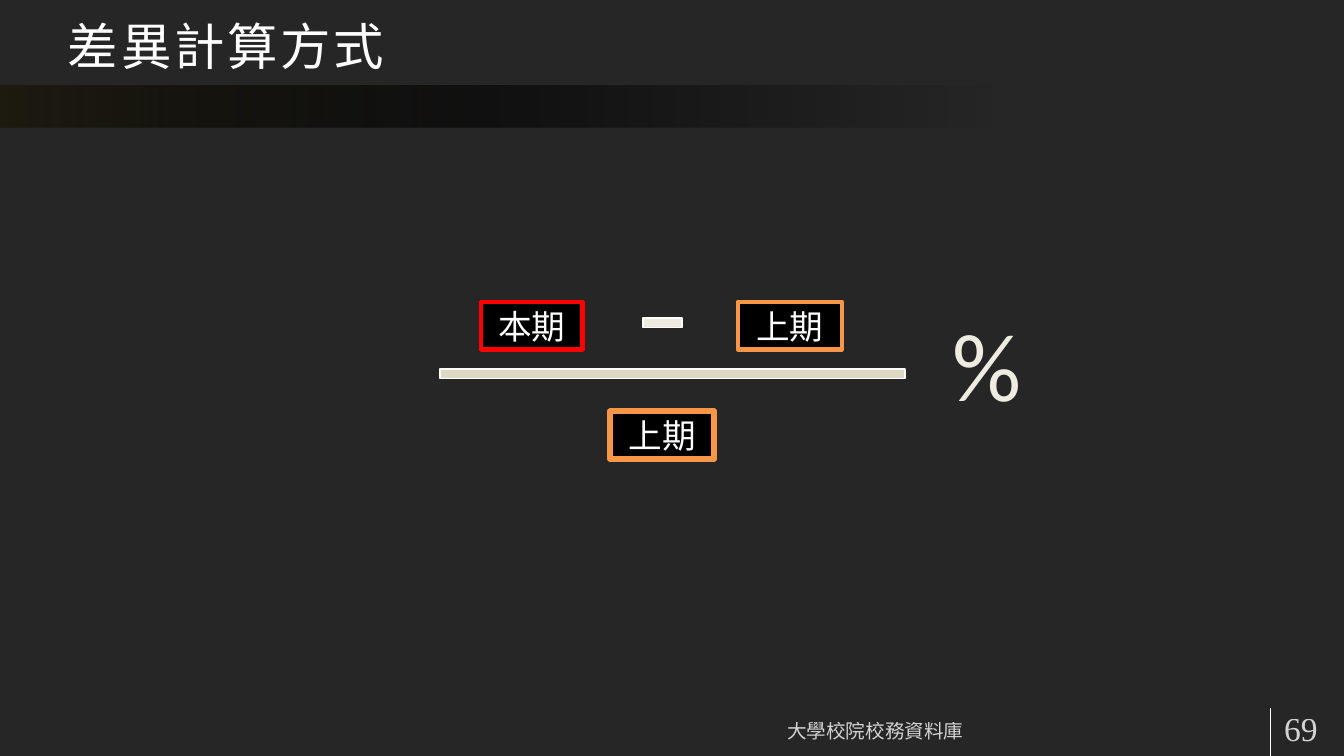
"""Build the slide that explains how the period-to-period difference is calculated."""
from dataclasses import dataclass

from lxml import etree
from pptx import Presentation
from pptx.dml.color import RGBColor
from pptx.enum.shapes import MSO_CONNECTOR, MSO_SHAPE
from pptx.enum.text import MSO_ANCHOR, PP_ALIGN
from pptx.oxml.ns import qn
from pptx.util import Inches, Pt

RECT, MINUS = MSO_SHAPE.RECTANGLE, MSO_SHAPE.MATH_MINUS
STRAIGHT = MSO_CONNECTOR.STRAIGHT
LEFT, CENTER = PP_ALIGN.LEFT, PP_ALIGN.CENTER
TOP, MIDDLE, BOTTOM = MSO_ANCHOR.TOP, MSO_ANCHOR.MIDDLE, MSO_ANCHOR.BOTTOM


@dataclass(frozen=True)
class Theme:
    background: str = "262626"
    white: str = "FFFFFF"
    black: str = "000000"
    olive: str = "1E1C11"
    current: str = "FF0000"
    previous: str = "F79646"
    cream: str = "EEECE1"
    sand: str = "DDD9C3"
    title_size: float = 54
    term_size: float = 36
    footer_size: float = 21
    percent_size: float = 103.5
    cjk_font: str = "Noto Sans CJK SC"
    serif_font: str = "Times New Roman"
    sans_font: str = "Calibri"


THEME = Theme()


@dataclass(frozen=True)
class Box:
    left: float
    top: float
    width: float
    height: float

    def lengths(self) -> list:
        return [Inches(v) for v in (self.left, self.top, self.width, self.height)]


@dataclass(frozen=True)
class Text:
    words: str
    size: float
    font: str = THEME.serif_font
    color: str = THEME.white
    align: PP_ALIGN = LEFT
    anchor: MSO_ANCHOR = TOP
    inset: tuple = (0.1, 0.05)
    opacity: int = 100
    spacing: int = 0


@dataclass(frozen=True)
class Block:
    box: Box
    fill: str
    line: str
    weight: float
    kind: MSO_SHAPE = RECT
    label: str = ""


@dataclass(frozen=True)
class Stop:
    position: int
    color: str
    opacity: int = 100


def rgb(value: str) -> RGBColor:
    return RGBColor.from_string(value)


def add_alpha(color, opacity: int) -> None:
    if opacity < 100:
        etree.SubElement(color, qn("a:alpha"), val=str(opacity * 1000))


def write(tf, text: Text) -> None:
    x, y = (Inches(v) for v in text.inset)
    frame = {"word_wrap": True, "vertical_anchor": text.anchor, "margin_left": x,
             "margin_right": x, "margin_top": y, "margin_bottom": y}
    for name, value in frame.items():
        setattr(tf, name, value)
    p = tf.paragraphs[0]
    p.alignment = text.align
    r = p.add_run()
    r.text = text.words
    for name, value in {"size": Pt(text.size), "name": text.font}.items():
        setattr(r.font, name, value)
    r.font.color.rgb = rgb(text.color)
    props = r._r.get_or_add_rPr()
    add_alpha(props.find(".//" + qn("a:srgbClr")), text.opacity)
    east_asian = etree.Element(qn("a:ea"), typeface=THEME.cjk_font)
    props.find(qn("a:latin")).addnext(east_asian)
    if text.spacing:
        props.set("spc", str(text.spacing * 100))


def add_text(s, box: Box, text: Text) -> None:
    write(s.shapes.add_textbox(*box.lengths()).text_frame, text)


def add_block(s, block: Block) -> None:
    sp = s.shapes.add_shape(block.kind, *block.box.lengths())
    sp.shadow.inherit = False
    sp.fill.solid()
    sp.fill.fore_color.rgb = rgb(block.fill)
    sp.line.color.rgb = rgb(block.line)
    sp.line.width = Pt(block.weight)
    if block.label:
        write(sp.text_frame, Text(block.label, THEME.term_size, align=CENTER, anchor=MIDDLE))


def add_band(s, box: Box, stops: list[Stop]) -> None:
    sp = s.shapes.add_shape(RECT, *box.lengths())
    sp.shadow.inherit = False
    sp.line.fill.background()
    sp.fill.gradient()
    sp.fill.gradient_angle = 0
    stop_list = sp._element.spPr.find(".//" + qn("a:gsLst"))
    for old in list(stop_list):
        stop_list.remove(old)
    for stop in stops:
        gs = etree.SubElement(stop_list, qn("a:gs"), pos=str(stop.position * 1000))
        add_alpha(etree.SubElement(gs, qn("a:srgbClr"), val=stop.color), stop.opacity)


def add_rule(s, x: float, top: float, bottom: float) -> None:
    ends = [Inches(v) for v in (x, top, x, bottom)]
    line = s.shapes.add_connector(STRAIGHT, *ends)
    line.line.color.rgb = rgb(THEME.white)
    line.line.width = Pt(0.75)
    etree.SubElement(line._element.spPr, qn("a:effectLst"))


def main() -> None:
    t = THEME
    prs = Presentation()
    prs.slide_width, prs.slide_height = Inches(20), Inches(11.25)
    s = prs.slides.add_slide(prs.slide_layouts[6])
    s.background.fill.solid()
    s.background.fill.fore_color.rgb = rgb(t.background)

    add_band(s, Box(0, 1.27, 20, 0.63),
             [Stop(0, t.olive), Stop(39, t.black, 54), Stop(74, t.black, 0)])
    add_rule(s, 18.9, 10.54, 11.25)
    add_text(s, Box(0.86, 0, 18, 1.35),
             Text("差異計算方式", t.title_size, t.cjk_font, anchor=MIDDLE,
                  inset=(0.15, 0.07), spacing=3))
    add_text(s, Box(7.16, 10.54, 11.73, 0.6),
             Text("大學校院校務資料庫", t.footer_size, align=CENTER, anchor=BOTTOM,
                  inset=(0.18, 0.09), opacity=80))
    add_text(s, Box(18.93, 10.54, 1.15, 0.6),
             Text("69", t.term_size, anchor=MIDDLE, inset=(0.18, 0.09), opacity=80))

    row, height = 4.49, 0.71
    blocks = [
        Block(Box(7.16, row, 1.51, height), t.black, t.current, 4.5, label="本期"),
        Block(Box(9.46, row, 0.79, 0.62), t.cream, t.white, 2, MINUS),
        Block(Box(9.08, 6.12, 1.55, height), t.black, t.previous, 6, label="上期"),
        Block(Box(5.3, 5.25, 9.42, 0.62), t.sand, t.white, 2, MINUS),
        Block(Box(10.98, row, 1.55, height), t.black, t.previous, 4.5, label="上期"),
    ]
    for block in blocks:
        add_block(s, block)
    add_text(s, Box(14.08, row, 2.33, 1.84),
             Text("%", t.percent_size, t.sans_font, t.cream))
    prs.save("out.pptx")


if __name__ == "__main__":
    main()
